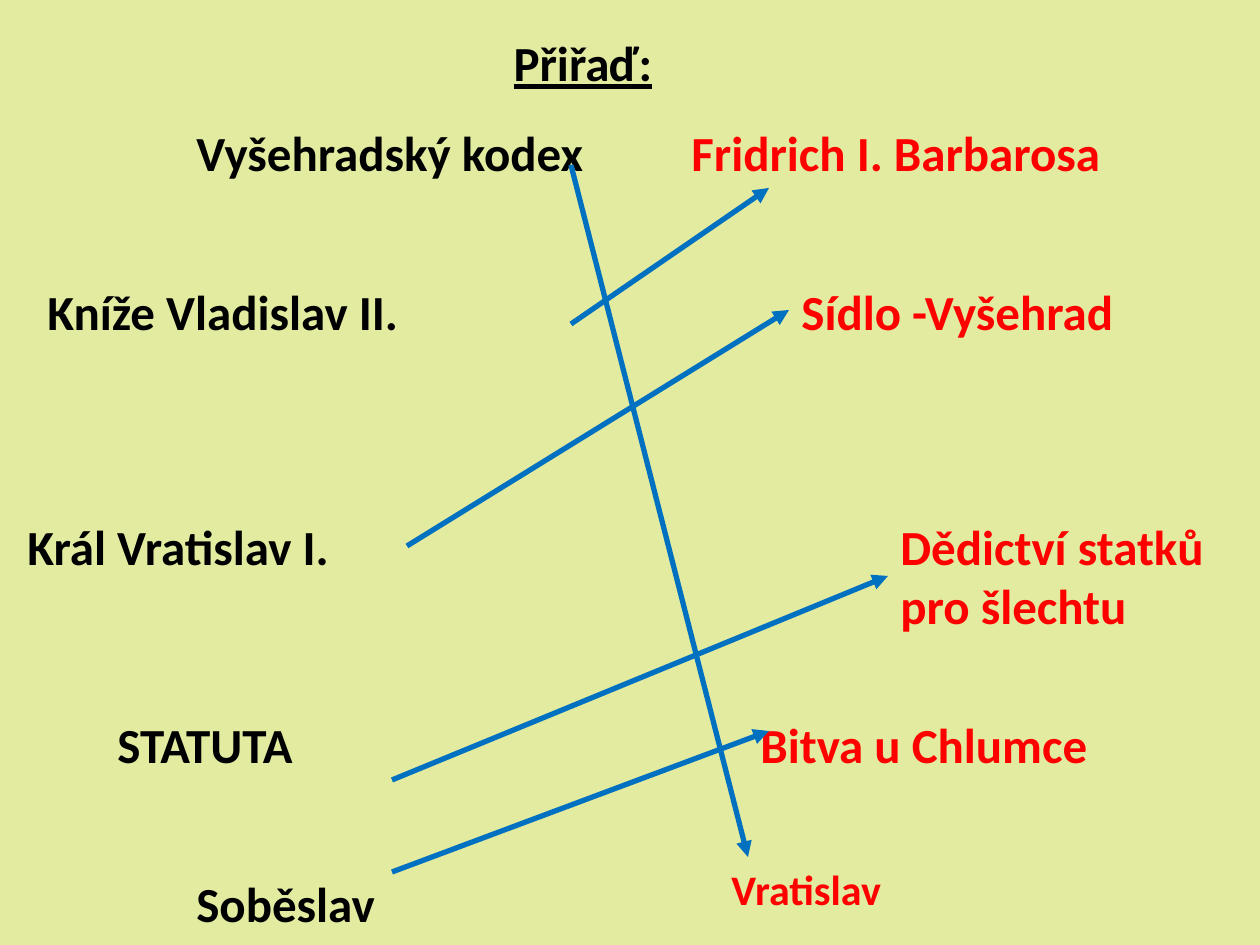
"""Build the matching-exercise slide with its answer arrows."""
from lxml.etree import SubElement
from pptx import Presentation
from pptx.dml.color import RGBColor
from pptx.enum.shapes import MSO_CONNECTOR
from pptx.enum.text import MSO_ANCHOR, MSO_AUTO_SIZE, PP_ALIGN
from pptx.oxml.ns import qn
from pptx.util import Inches, Pt

PX = Inches(1) / 126
BACKGROUND = RGBColor(0xE2, 0xEB, 0xA0)
BLACK = RGBColor(0x00, 0x00, 0x00)
RED = RGBColor(0xFF, 0x00, 0x00)
BLUE = RGBColor(0x00, 0x70, 0xC0)
FRAME = {"word_wrap": True, "auto_size": MSO_AUTO_SIZE.NONE,
         "vertical_anchor": MSO_ANCHOR.TOP}
FONT = {"name": "Calibri", "bold": True}


def emu(*lengths):
    return [round(n * PX) for n in lengths]


def write(sp, text, color, size=28, underline=False):
    tf = sp.text_frame
    for key, value in FRAME.items():
        setattr(tf, key, value)
    p = tf.paragraphs[0]
    p.alignment = PP_ALIGN.LEFT
    r = p.add_run()
    r.text = text
    for key, value in {**FONT, "size": Pt(size), "underline": underline}.items():
        setattr(r.font, key, value)
    r.font.color.rgb = color


prs = Presentation()
prs.slide_width, prs.slide_height = Inches(10), Inches(7.5)
s = prs.slides.add_slide(prs.slide_layouts[5])
s.background.fill.solid()
s.background.fill.fore_color.rgb = BACKGROUND

title = s.shapes.title
title.left, title.top, title.width, title.height = emu(501, 26, 198, 72)
write(title, "Přiřaď:", BLACK, underline=True)

terms = [
    ("Vyšehradský kodex", 184, 116, 418),
    ("Kníže Vladislav II.", 35, 275, 536),
    ("Král Vratislav I.", 15, 510, 420),
    ("STATUTA", 105, 708, 367),
    ("Soběslav", 184, 867, 518),
]
for text, x, y, w in terms:
    write(s.shapes.add_textbox(*emu(x, y, w, 72)), text, BLACK)

answers = [
    ("Fridrich I. Barbarosa", 679, 116, 457, 72, 28),
    ("Sídlo -Vyšehrad", 789, 275, 348, 72, 28),
    ("Dědictví statků pro šlechtu", 888, 510, 338, 131, 28),
    ("Bitva u Chlumce", 748, 708, 397, 72, 28),
    ("Vratislav", 719, 857, 205, 63, 24),
]
for text, x, y, w, h, size in answers:
    write(s.shapes.add_textbox(*emu(x, y, w, h)), text, RED, size)

arrows = [
    (571, 324, 769, 188),
    (571, 165, 748, 857),
    (392, 780, 888, 576),
    (407, 546, 789, 310),
    (392, 872, 769, 731),
]
for ends in arrows:
    arrow = s.shapes.add_connector(MSO_CONNECTOR.STRAIGHT, *emu(*ends))
    arrow.line.color.rgb = BLUE
    arrow.line.width = Pt(3)
    SubElement(arrow.line._get_or_add_ln(), qn("a:tailEnd"), type="triangle")
    SubElement(arrow._element.spPr, qn("a:effectLst"))

prs.save("out.pptx")
